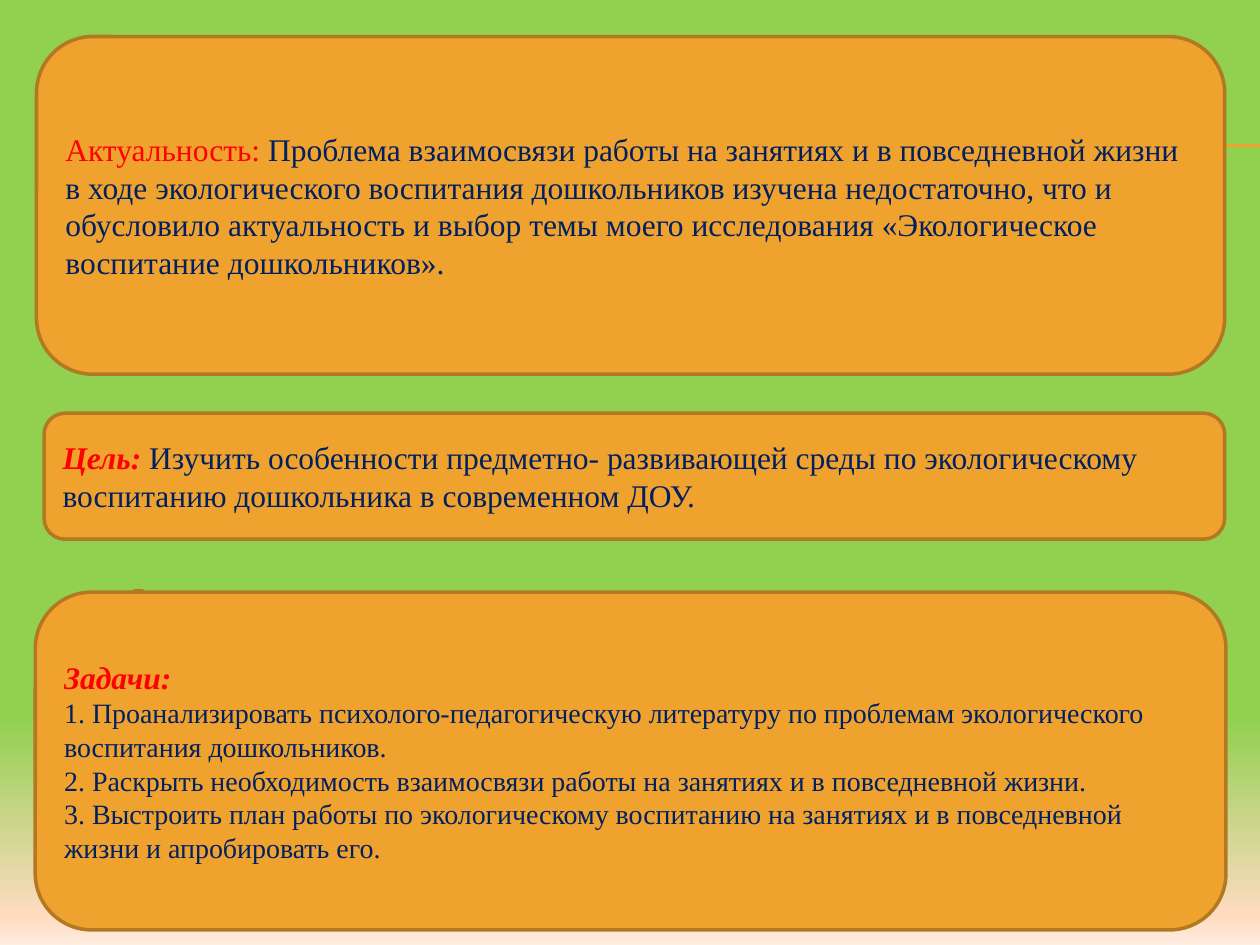
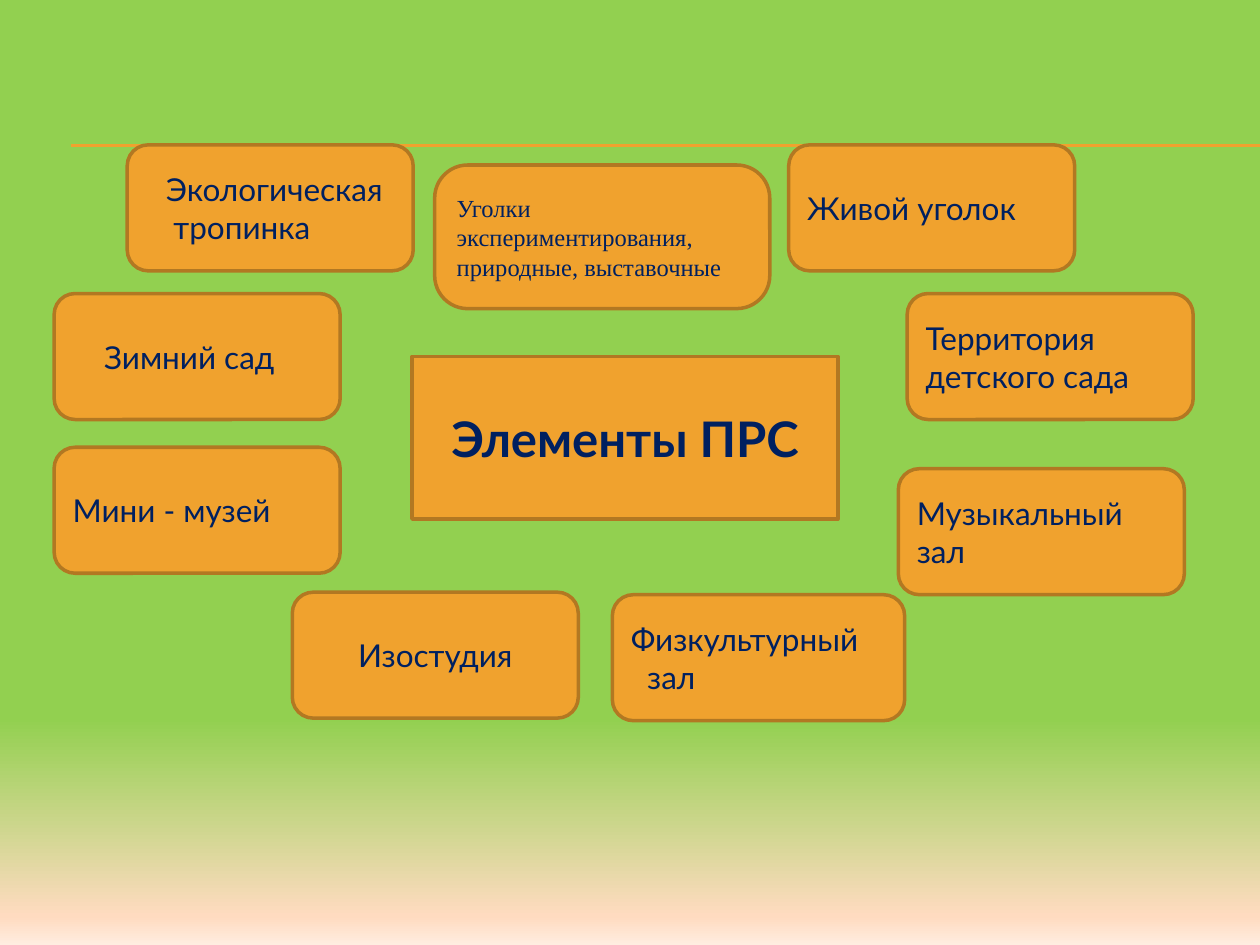
from copy import deepcopy

from pptx import Presentation
from pptx.dml.color import RGBColor
from pptx.enum import shapes, text
from pptx.oxml.ns import qn
from pptx.util import Inches, Pt

ORANGE, BROWN, NAVY, RED = "F0A22E", "B27822", "002060", "FF0000"
GRADIENT = [(0.76, "92D050"), (0.97, "FFDBC0"), (1, "FFEDE0")]
SERIF, SANS = "Times New Roman", "Lato"
RULE_LEFT, RULE_TOPS = 0.56, (1.15, 1.16)
SLIDE_W, SLIDE_H = 10, 7.5

# Each statement: box, heading, heading is bold italic, text beside it, points below it
STATEMENTS = [
    ((0.29, 0.29, 9.43, 2.68), "Актуальность:", False,
     " Проблема взаимосвязи работы на занятиях и в повседневной жизни в ходе "
     "экологического воспитания дошкольников изучена недостаточно, что и обусловило "
     "актуальность и выбор темы моего исследования «Экологическое воспитание "
     "дошкольников».", []),
    ((0.35, 3.28, 9.37, 1), "Цель:", True,
     " Изучить особенности предметно- развивающей среды по экологическому воспитанию "
     "дошкольника в современном ДОУ.", []),
    ((0.28, 4.7, 9.45, 2.68), "Задачи:", True, "", [
        "1. Проанализировать психолого-педагогическую литературу по проблемам "
        "экологического воспитания дошкольников.",
        "2. Раскрыть необходимость взаимосвязи работы на занятиях и в повседневной жизни.",
        "3. Выстроить план работы по экологическому воспитанию на занятиях и в "
        "повседневной жизни и апробировать его.",
    ]),
]
SMALL_TAB = (1.06, 4.69, 0.08, 0.08)

CENTRE = ("Элементы ПРС", (3.27, 2.83, 3.38, 1.29))
CORNERS = ("Уголки", "экспериментирования, природные, выставочные")
CORNERS_BOX = (3.45, 1.31, 2.66, 1.14)
ELEMENT_W, ELEMENT_H = 2.27, 1
# Each element: label, left, top, then options for its box and text
ELEMENTS = [
    ("Зимний сад", 0.43, 2.33, {"indents": (0.25, 0)}),
    ("Экологическая тропинка", 1.01, 1.15, {"indents": (0.16, 0.22)}),
    ("Живой уголок", 6.26, 1.15, {}),
    ("Территория детского сада", 7.2, 2.33, {}),
    ("Изостудия", 2.32, 4.7, {"centred": True}),
    ("Музыкальный зал", 7.13, 3.72, {}),
    ("Физкультурный зал", 4.86, 4.72, {"width": 2.32, "indents": (0, 0.13)}),
    ("Мини - музей", 0.43, 3.55, {}),
]


def rgb(value):
    return RGBColor.from_string(value)


def set_background(master):
    fill = master.background.fill
    fill.gradient()
    fill.gradient_angle = 270
    stops = master.element.find(".//" + qn("p:bg")).find(".//" + qn("a:gsLst"))
    stops.append(deepcopy(stops[-1]))
    for stop, (position, colour) in zip(fill.gradient_stops, GRADIENT):
        stop.position = position
        stop.color.rgb = rgb(colour)


def add_slide(prs):
    """Add a slide with the double rule near its top."""
    s = prs.slides.add_slide(prs.slide_layouts[6])
    for top in RULE_TOPS:
        rule = s.shapes.add_connector(
            shapes.MSO_CONNECTOR.STRAIGHT, Inches(RULE_LEFT), Inches(top),
            Inches(SLIDE_W), Inches(top))
        rule.line.color.rgb = rgb(ORANGE)
        rule.line.width = Pt(0.75)
        sp_pr = rule._element.spPr
        sp_pr.append(sp_pr.makeelement(qn("a:effectLst"), {}))
    return s


def add_box(s, box, kind=shapes.MSO_SHAPE.ROUNDED_RECTANGLE):
    sp = s.shapes.add_shape(kind, *map(Inches, box))
    sp.shadow.inherit = False
    sp.fill.solid()
    sp.fill.fore_color.rgb = rgb(ORANGE)
    sp.line.color.rgb = rgb(BROWN)
    sp.line.width = Pt(2)
    sp.text_frame.word_wrap = True
    sp.text_frame.vertical_anchor = text.MSO_ANCHOR.MIDDLE
    return sp


def write(sp, lines, size=18, font=SANS, bold=False, centred=False):
    """Fill the box with one paragraph per line and return the paragraphs."""
    tf = sp.text_frame
    for i, line in enumerate(lines):
        p = tf.paragraphs[0] if i == 0 else tf.add_paragraph()
        p.text = line
        p.alignment = text.PP_ALIGN.CENTER if centred else text.PP_ALIGN.LEFT
        p.font.size, p.font.name, p.font.bold = Pt(size), font, bold
        p.font.color.rgb = rgb(NAVY)
        for r in p.runs:
            r.font.size, r.font.name, r.font.bold = Pt(size), font, bold
            r.font.color.rgb = rgb(NAVY)
    return tf.paragraphs


def indent(p, first, rest):
    """Indent the first line and the following lines separately."""
    p_pr = p._p.get_or_add_pPr()
    p_pr.set("marL", str(Inches(rest)))
    p_pr.set("indent", str(Inches(first) - Inches(rest)))


def build_statements(prs):
    s = add_slide(prs)
    add_box(s, SMALL_TAB)
    for box, heading, emphasised, body, points in STATEMENTS:
        paragraphs = write(add_box(s, box), [heading] + points, 16, SERIF)
        first = paragraphs[0]
        head = first.runs[0]
        head.font.size = Pt(18)
        head.font.bold = head.font.italic = emphasised
        head.font.color.rgb = rgb(RED)
        if body:
            r = first.add_run()
            r.text = body
            r.font.size, r.font.name = Pt(18), SERIF
            r.font.color.rgb = rgb(NAVY)


def build_elements(prs):
    s = add_slide(prs)
    label, box = CENTRE
    write(add_box(s, box, shapes.MSO_SHAPE.RECTANGLE), [label], 28, bold=True, centred=True)
    for label, left, top, options in ELEMENTS:
        sp = add_box(s, (left, top, options.get("width", ELEMENT_W), ELEMENT_H))
        p = write(sp, [label], centred=options.get("centred", False))[0]
        if "indents" in options:
            indent(p, *options["indents"])
    corners = add_box(s, CORNERS_BOX)
    corners.adjustments[0] = 0.23
    write(corners, CORNERS, 14, SERIF)


def main():
    prs = Presentation()
    prs.slide_width, prs.slide_height = Inches(SLIDE_W), Inches(SLIDE_H)
    set_background(prs.slide_master)
    build_statements(prs)
    build_elements(prs)
    prs.save("out.pptx")


if __name__ == "__main__":
    main()
